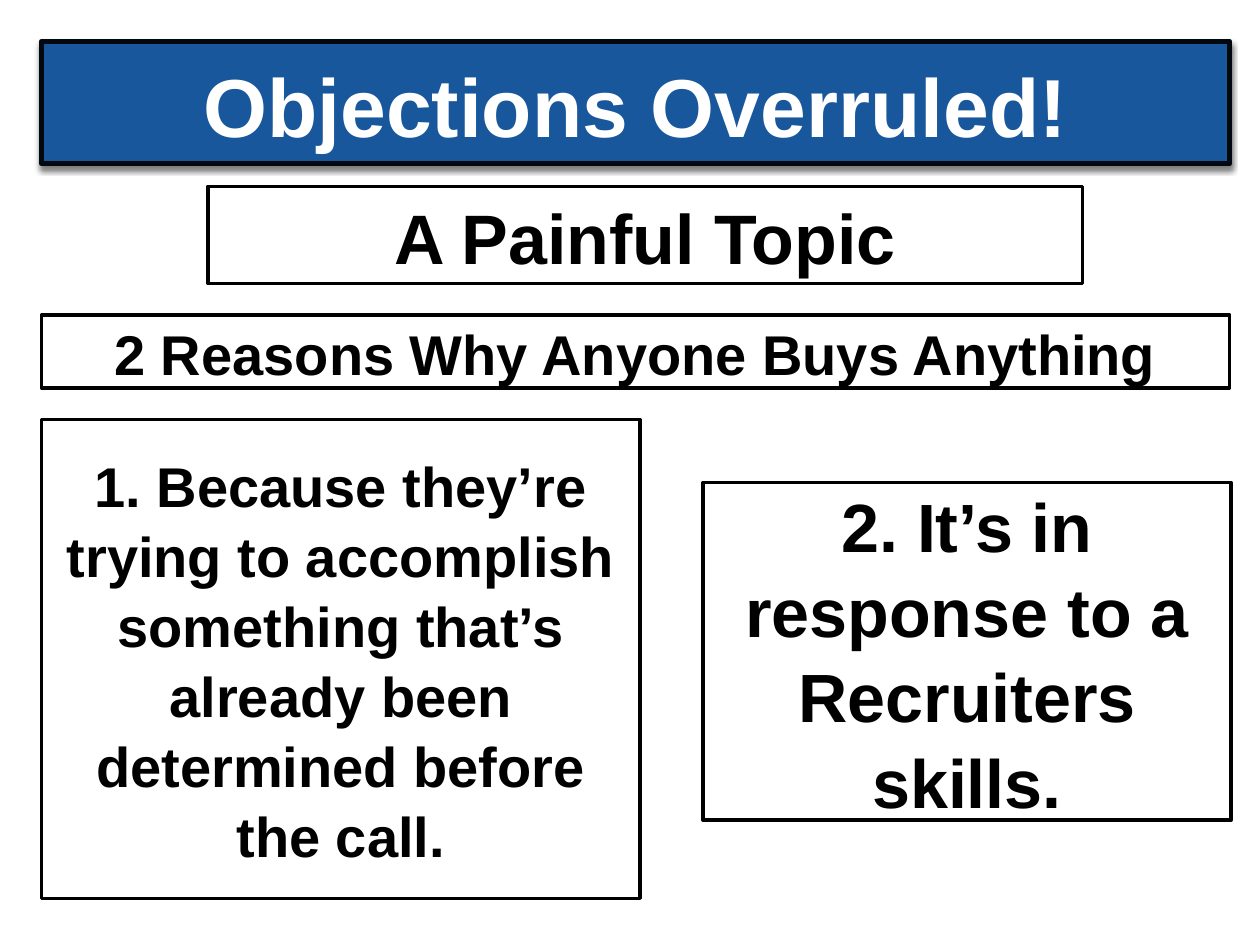
import dataclasses

import lxml.etree
import pptx
import pptx.dml.color
import pptx.enum.shapes
import pptx.enum.text
import pptx.oxml.ns
import pptx.util

Inches = pptx.util.Inches
HUES = {"blue": "18579B", "ink": "02080F", "black": "000000", "white": "FFFFFF"}
LEFT, WIDE = 0.33, 9.43


@dataclasses.dataclass(frozen=True)
class Box:
    text: str
    left: float
    top: float
    width: float
    height: float
    size: float
    fill: str = "white"
    edge: str = "black"
    font: str = "black"
    line: float = 2
    shade: bool = False


BOXES = [
    Box("Objections Overruled!", LEFT, 0.33, WIDE, 0.97, 47,
        "blue", "ink", "white", 3, True),
    Box("A Painful Topic", 1.65, 1.48, 6.94, 0.77, 40),
    Box("1. Because they’re trying to accomplish something that’s already "
        "been determined before the call.", LEFT, 3.33, 4.75, 3.8, 32),
    Box("2. It’s in response to a Recruiters skills.", 5.58, 3.83, 4.19, 2.68, 39),
    Box("2 Reasons Why Anyone Buys Anything", LEFT, 2.5, WIDE, 0.58, 32),
]


def tint(name: str) -> pptx.dml.color.RGBColor:
    return pptx.dml.color.RGBColor.from_string(HUES[name])


def add_shade(shape) -> None:
    qn = pptx.oxml.ns.qn
    effects = shape._element.spPr.find(qn("a:effectLst"))
    outer = lxml.etree.SubElement(
        effects, qn("a:outerShdw"), blurRad=str(pptx.util.Pt(3)),
        dist=str(pptx.util.Pt(2)), dir="5400000", rotWithShape="0")
    color = lxml.etree.SubElement(outer, qn("a:srgbClr"), val=HUES["black"])
    lxml.etree.SubElement(color, qn("a:alpha"), val="50000")


def add_box(slide, box: Box) -> None:
    shape = slide.shapes.add_shape(
        pptx.enum.shapes.MSO_SHAPE.RECTANGLE, Inches(box.left), Inches(box.top),
        Inches(box.width), Inches(box.height))
    shape.shadow.inherit = False
    shape.fill.solid()
    shape.fill.fore_color.rgb = tint(box.fill)
    shape.line.color.rgb = tint(box.edge)
    shape.line.width = pptx.util.Pt(box.line)
    if box.shade:
        add_shade(shape)
    frame = shape.text_frame
    frame.word_wrap = True
    frame.vertical_anchor = pptx.enum.text.MSO_ANCHOR.MIDDLE
    frame.text = box.text
    para = frame.paragraphs[0]
    para.alignment = pptx.enum.text.PP_ALIGN.CENTER
    para.line_spacing = 1.04
    font = para.runs[0].font
    font.name = "Arial"
    font.size = pptx.util.Pt(box.size)
    font.bold = True
    font.color.rgb = tint(box.font)


def main() -> None:
    """Build the objections slide and save it."""
    deck = pptx.Presentation()
    deck.slide_width, deck.slide_height = Inches(10), Inches(7.5)
    slide = deck.slides.add_slide(deck.slide_layouts[6])
    for box in BOXES:
        add_box(slide, box)
    deck.save("out.pptx")


if __name__ == "__main__":
    main()
